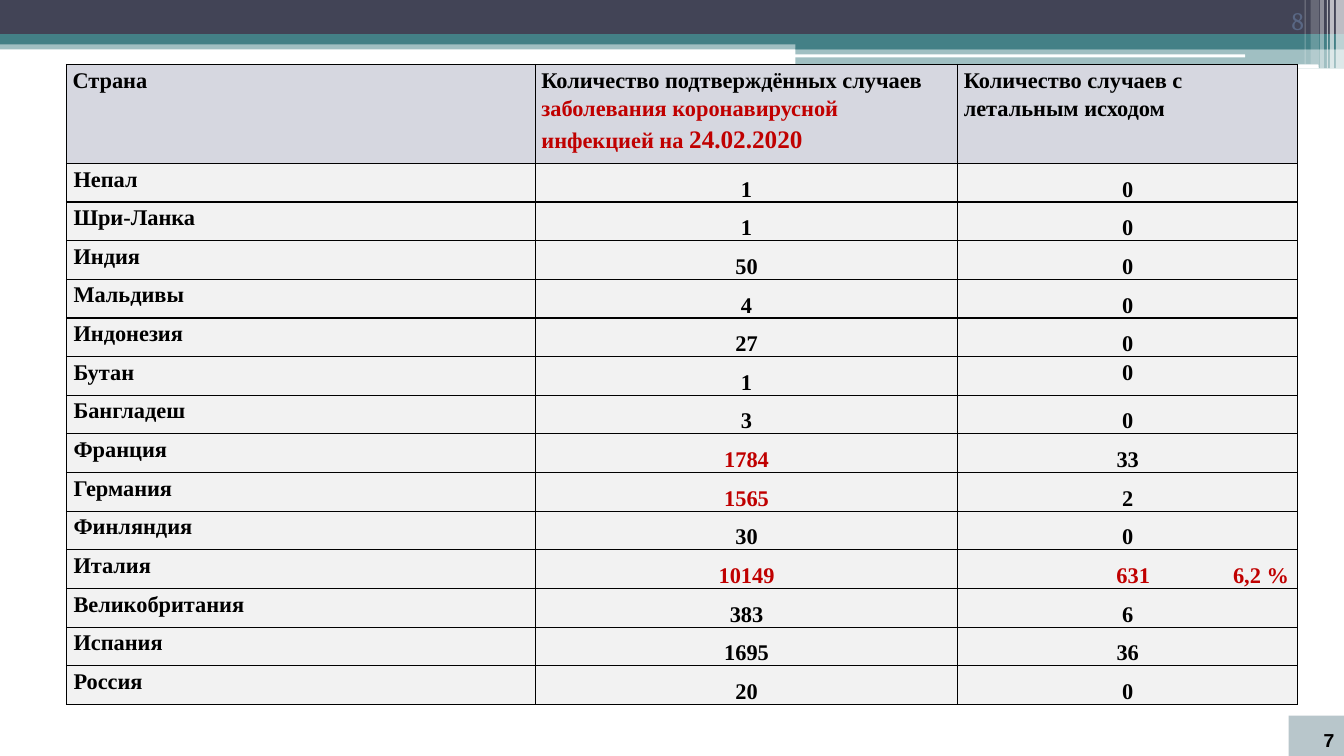
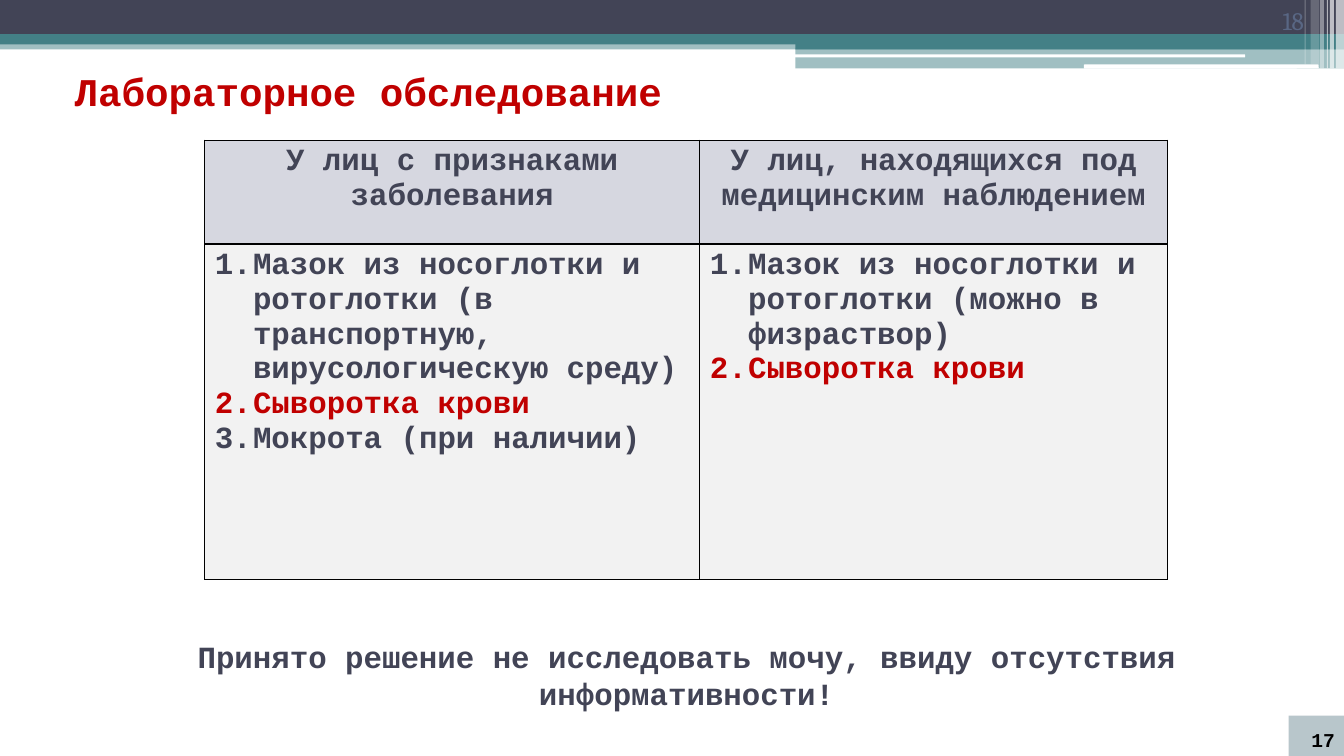
from lxml import etree
from pptx import Presentation
from pptx.dml.color import RGBColor
from pptx.enum.shapes import MSO_SHAPE
from pptx.enum.text import MSO_ANCHOR, MSO_AUTO_SIZE, PP_ALIGN
from pptx.oxml.ns import qn
from pptx.util import Inches, Pt

RECT, ROUND = MSO_SHAPE.RECTANGLE, MSO_SHAPE.ROUNDED_RECTANGLE
LEFT, CENTER, RIGHT = PP_ALIGN.LEFT, PP_ALIGN.CENTER, PP_ALIGN.RIGHT
TOP, MIDDLE, BOTTOM = MSO_ANCHOR.TOP, MSO_ANCHOR.MIDDLE, MSO_ANCHOR.BOTTOM

COLORS = {
    "dark": "424456", "teal": "438086", "white": "FFFFFF", "black": "000000",
    "red": "C00000", "head": "D6D7E0", "cell": "F2F2F2",
    "page": "596784", "page_box": "9BAFB5",
}

# shape, left, top, width, height, colour, opacity in percent
BANDS = [
    (RECT, 0, 0.4, 13.33, 0.09, "teal", 50),
    (RECT, 0, 0, 13.33, 0.34, "dark", 100),
    (RECT, 0, 0.34, 13.33, 0.1, "teal", 100),
    (RECT, 7.89, 0.39, 5.44, 0.1, "teal", 100),
    (RECT, 7.89, 0.48, 5.44, 0.2, "teal", 50),
    (ROUND, 7.88, 0.54, 4.47, 0.03, "white", 100),
    (ROUND, 10.75, 0.64, 2.33, 0.04, "white", 100),
    (RECT, 13.25, 0, 0.08, 0.68, "white", 65),
    (RECT, 13.19, 0, 0.04, 0.68, "white", 65),
    (RECT, 13.16, 0, 0.01, 0.68, "white", 60),
    (RECT, 13.09, 0, 0.04, 0.68, "white", 40),
    (RECT, 13, 0, 0.08, 0.64, "white", 20),
    (RECT, 12.94, 0, 0.01, 0.64, "white", 30),
]

TABLE_FONT = {"name": "Times New Roman", "size": 16, "color": "black", "bold": True}
MONO_FONT = {"name": "Courier New", "size": 22, "color": "dark", "bold": True}
TITLE_FONT = {**MONO_FONT, "size": 28, "color": "red"}
PAGE_FONT = {"name": "Cambria", "size": 18, "color": "page"}
BOX_FONT = {**MONO_FONT, "size": 14, "color": "black"}
RED = {"color": "red"}

CASE_HEADS = [
    [("Страна", {})],
    [("Количество подтверждённых случаев ", {}),
     ("заболевания коронавирусной инфекцией на ", RED),
     ("24.02.2020", {"color": "red", "size": 18})],
    [("Количество случаев с летальным исходом", {})],
]
CASES = [
    ("Непал", "1", "0"), ("Шри-Ланка", "1", "0"), ("Индия", "50", "0"),
    ("Мальдивы", "4", "0"), ("Индонезия", "27", "0"), ("Бутан", "1", "0"),
    ("Бангладеш", "3", "0"), ("Франция", "1784", "33"),
    ("Германия", "1565", "2"), ("Финляндия", "30", "0"),
    ("Италия", "10149", "\t631\t6,2 %"), ("Великобритания", "383", "6"),
    ("Испания", "1695", "36"), ("Россия", "20", "0"),
]
RED_VALUES = {"1784", "1565", "10149", "\t631\t6,2 %"}
DEATH_TABS = [(1.67, "ctr"), (2.66, "l")]
TOP_CELL = ("Бутан", 2)

LAB_TITLE = "Лабораторное обследование"
LAB_HEADS = ["У лиц с признаками заболевания",
             "У лиц, находящихся под медицинским наблюдением"]
LAB_LISTS = [
    [("Мазок из носоглотки и ротоглотки (в транспортную, вирусологическую среду)", {}),
     ("Сыворотка крови", RED),
     ("Мокрота (при наличии)", {})],
    [("Мазок из носоглотки и ротоглотки (можно в физраствор)", {}),
     ("Сыворотка крови", RED)],
]
LAB_NOTE = "Принято решение не исследовать мочу, ввиду отсутствия информативности!"


def rgb(name):
    return RGBColor.from_string(COLORS[name])


def place(sp, *box):
    sp.left, sp.top, sp.width, sp.height = map(Inches, box)


def add_block(slide, shape, *box, color, opacity=100):
    sp = slide.shapes.add_shape(shape, *map(Inches, box))
    sp.shadow.inherit = False
    sp.line.fill.background()
    sp.fill.solid()
    sp.fill.fore_color.rgb = rgb(color)
    if opacity < 100:
        clr = sp.element.spPr.find(".//" + qn("a:srgbClr"))
        etree.SubElement(clr, qn("a:alpha"), val=str(opacity * 1000))
    return sp


def write(p, runs, font, **para):
    """Fill a paragraph with (text, font overrides) runs."""
    for key, value in para.items():
        setattr(p, key, value)
    for text, extra in runs:
        r = p.add_run()
        r.text = text
        for key, value in {**font, **extra}.items():
            if key == "color":
                r.font.color.rgb = rgb(value)
            else:
                setattr(r.font, key, Pt(value) if key == "size" else value)


def set_bullet(p, tag, left, indent=0, **attrs):
    pPr = p._p.get_or_add_pPr()
    pPr.set("marL", str(Inches(left)))
    pPr.set("indent", str(Inches(indent)))
    etree.SubElement(pPr, qn(tag), **attrs)


def set_tabs(p, stops):
    tabs = etree.SubElement(p._p.get_or_add_pPr(), qn("a:tabLst"))
    for pos, align in stops:
        etree.SubElement(tabs, qn("a:tab"), pos=str(Inches(pos)), algn=align)


def style_cell(cell, color):
    cell.fill.solid()
    cell.fill.fore_color.rgb = rgb(color)
    tcPr = cell._tc.get_or_add_tcPr()
    for i, side in enumerate(("lnL", "lnR", "lnT", "lnB")):
        ln = etree.Element(qn("a:" + side), w=str(Pt(1)))
        fill = etree.SubElement(ln, qn("a:solidFill"))
        etree.SubElement(fill, qn("a:srgbClr"), val=COLORS["black"])
        tcPr.insert(i, ln)


def add_table(slide, left, top, widths, heights):
    """Add a bordered table with a tinted first row."""
    table = slide.shapes.add_table(
        len(heights), len(widths), Inches(left), Inches(top),
        Inches(sum(widths)), Inches(sum(heights))).table
    table.first_row = table.horz_banding = False
    for col, width in zip(table.columns, widths):
        col.width = Inches(width)
    for i, (row, height) in enumerate(zip(table.rows, heights)):
        row.height = Inches(height)
        for cell in row.cells:
            style_cell(cell, "cell" if i else "head")
    return table


def add_page_numbers(slide, number, box_number):
    text = slide.shapes.add_textbox(*map(Inches, (11.92, 0, 1.11, 0.4)))
    box = add_block(slide, RECT, 12.78, 7.1, 0.56, 0.4, color="page_box", opacity=70)
    for sp, value, font in ((text, number, PAGE_FONT), (box, box_number, BOX_FONT)):
        tf = sp.text_frame
        tf.word_wrap = True
        tf.vertical_anchor = BOTTOM
        write(tf.paragraphs[0], [(value, {})], font, alignment=RIGHT)


def move_bands_to_master(prs, slide):
    """Draw the bands on a slide, then put them behind the master's placeholders."""
    tree = prs.slide_master.shapes.element
    for i, (shape, *box, color, opacity) in enumerate(BANDS):
        sp = add_block(slide, shape, *box, color=color, opacity=opacity).element
        sp.nvSpPr.cNvPr.set("id", str(100 + i))
        tree.insert(2 + i, sp)


def build_cases(slide):
    head_height = 0.98
    row_height = (6.35 - head_height) / len(CASES)
    table = add_table(slide, 0.66, 0.64, [4.65, 4.19, 3.37],
                      [head_height] + [row_height] * len(CASES))
    rows = [CASE_HEADS] + [[[(v, RED if v in RED_VALUES else {})] for v in row]
                           for row in CASES]
    for i, row in enumerate(rows):
        for j, runs in enumerate(row):
            cell = table.cell(i, j)
            is_value = i > 0 and j > 0
            cell.margin_left = cell.margin_right = Inches(0.07 if i else 0.06)
            cell.margin_top = cell.margin_bottom = 0
            at_top = not is_value or (CASES[i - 1][0], j) == TOP_CELL
            cell.vertical_anchor = TOP if at_top else BOTTOM
            has_tabs = "\t" in runs[0][0]
            p = cell.text_frame.paragraphs[0]
            write(p, runs, TABLE_FONT, line_spacing=1.15,
                  alignment=CENTER if is_value and not has_tabs else LEFT)
            if has_tabs:
                set_tabs(p, DEATH_TABS)
    add_page_numbers(slide, "8", "7")


def build_lab(slide):
    title, body = slide.placeholders
    place(title, 0.64, 0.26, 12, 1.28)
    title.text_frame.vertical_anchor = MIDDLE
    write(title.text_frame.paragraphs[0], [(LAB_TITLE, {})], TITLE_FONT, alignment=LEFT)

    place(body, 0.37, 6.28, 12.76, 1.1)
    body.text_frame.auto_size = MSO_AUTO_SIZE.NONE
    p = body.text_frame.paragraphs[0]
    write(p, [(LAB_NOTE, {})], MONO_FONT, alignment=CENTER, space_before=Pt(3))
    set_bullet(p, "a:buNone", 0.12)

    add_page_numbers(slide, "18", "17")
    table = add_table(slide, 2.03, 1.39, [4.91, 4.64], [1.03, 3.33])
    for j, (head, items) in enumerate(zip(LAB_HEADS, LAB_LISTS)):
        write(table.cell(0, j).text_frame.paragraphs[0], [(head, {})],
              MONO_FONT, alignment=CENTER)
        tf = table.cell(1, j).text_frame
        for k, item in enumerate(items):
            p = tf.add_paragraph() if k else tf.paragraphs[0]
            write(p, [item], MONO_FONT)
            set_bullet(p, "a:buAutoNum", 0.38, -0.38, type="arabicPeriod")


def main():
    prs = Presentation()
    prs.slide_width, prs.slide_height = Inches(13.33), Inches(7.5)
    cases = prs.slides.add_slide(prs.slide_layouts.get_by_name("Blank"))
    lab = prs.slides.add_slide(prs.slide_layouts.get_by_name("Title and Content"))
    move_bands_to_master(prs, cases)
    build_cases(cases)
    build_lab(lab)
    prs.save("out.pptx")


if __name__ == "__main__":
    main()
